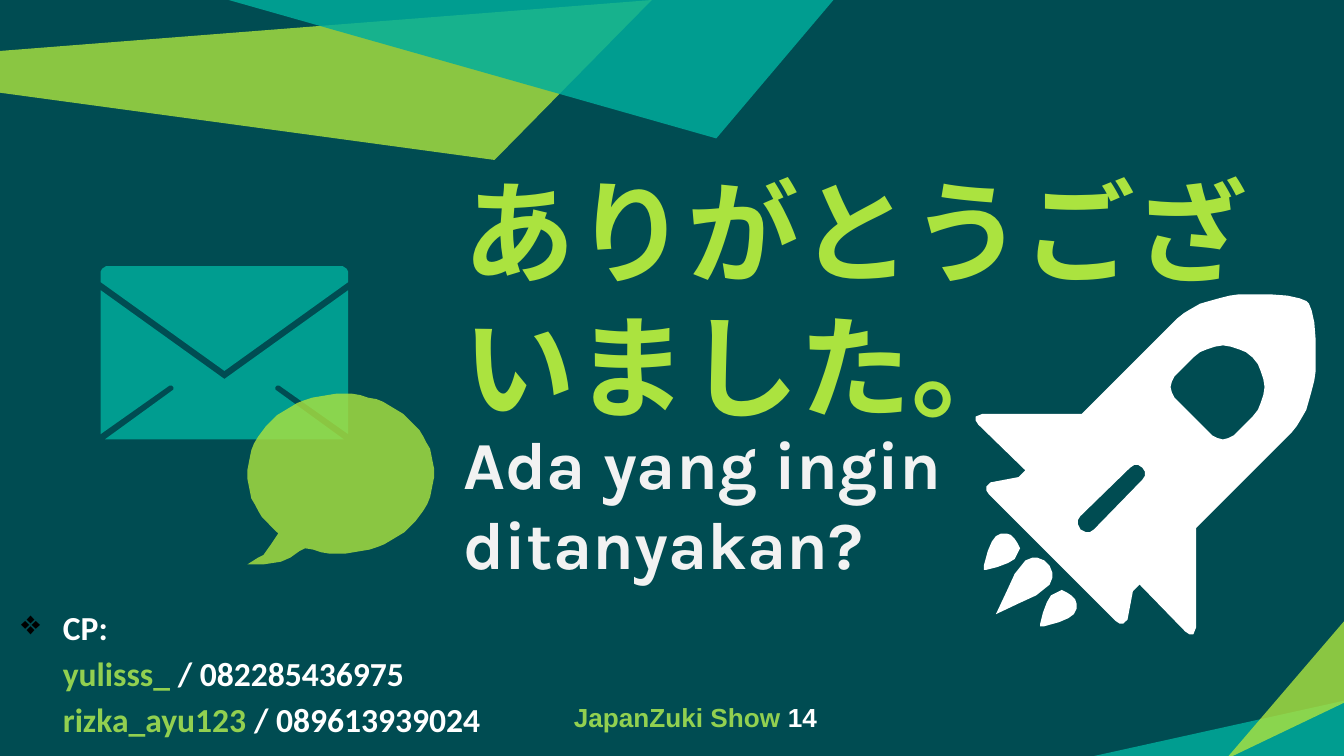
"""Build the closing slide with thanks, a question prompt and contact details."""
from math import cos, radians, sin

from lxml import etree
from pptx import Presentation
from pptx.dml.color import RGBColor
from pptx.enum.text import MSO_ANCHOR, MSO_AUTO_SIZE, PP_ALIGN
from pptx.oxml.ns import qn
from pptx.util import Inches, Pt

TOP = MSO_ANCHOR.TOP
NO_FIT = MSO_AUTO_SIZE.NONE
LEFT, CENTER = PP_ALIGN.LEFT, PP_ALIGN.CENTER

DEEP_TEAL = RGBColor(0x00, 0x4C, 0x52)
TEAL = RGBColor(0x00, 0xAE, 0x9D)
LIME = RGBColor(0xAB, 0xE3, 0x3F)
GREEN = RGBColor(0x92, 0xD0, 0x50)
PALE = RGBColor(0xF2, 0xF2, 0xF2)
WHITE = RGBColor(0xFF, 0xFF, 0xFF)

presentation = Presentation()
presentation.slide_width = Inches(10)
presentation.slide_height = presentation.slide_width * 9 // 16
COLUMN = presentation.slide_width // 1000
slide = presentation.slides.add_slide(presentation.slide_layouts[5])
slide.background.fill.solid()
slide.background.fill.fore_color.rgb = DEEP_TEAL


def draw(shapes, outlines, color, opacity=100):
    """Draw closed outlines, given in grid columns, as one filled shape."""
    builder = shapes.build_freeform(*outlines[0][0], scale=COLUMN)
    for index, outline in enumerate(outlines):
        if index:
            builder.move_to(*outline[0])
        builder.add_line_segments(outline[1:], close=True)
    shape = builder.convert_to_shape()
    shape.shadow.inherit = False
    shape.line.fill.background()
    shape.fill.solid()
    shape.fill.fore_color.rgb = color
    if opacity < 100:
        fill_color = shape.fill._xPr.find(qn("a:solidFill"))[0]
        etree.SubElement(fill_color, qn("a:alpha"), val=str(opacity * 1000))


def write(shape, box, inset, runs, font_name, size, alignment=LEFT):
    """Place a text shape on the grid and fill its paragraph; None breaks a line."""
    shape.left, shape.top, shape.width, shape.height = [side * COLUMN for side in box]
    frame = shape.text_frame
    frame.word_wrap = True
    frame.auto_size = NO_FIT
    frame.vertical_anchor = TOP
    frame.margin_left = frame.margin_right = 10 * COLUMN
    frame.margin_top = frame.margin_bottom = inset * COLUMN
    paragraph = frame.paragraphs[0]
    paragraph.alignment = alignment
    for item in runs:
        if item is None:
            paragraph.add_line_break()
            continue
        run = paragraph.add_run()
        run.text, run.font.color.rgb = item
        run.font.name = font_name
        run.font.size = Pt(size)
        run.font.bold = True
    return paragraph


RIBBONS = [
    ([(-1, 38), (0, 69), (368, 119), (485, 0)], LIME, 81),
    ([(1002, 521), (1002, 565), (803, 565)], TEAL, 83),
    ([(1002, 522), (1002, 460), (912, 565)], LIME, 81),
    ([(170, 0), (533, 103), (621, -1), (609, 0)], TEAL, 83),
]
for ribbon, color, opacity in RIBBONS:
    draw(slide.shapes, [ribbon], color, opacity)

write(slide.shapes.title, (335, 111, 644, 127), 10,
      [("ありがとうございました。", LIME)], "Manrope", 60)
question = write(slide.shapes.add_textbox(0, 0, 0, 0), (335, 304, 605, 149), 10,
                 [("Ada yang ingin ditanyakan?", PALE)], "Karla", 36)
question.space_before = Pt(6)

ENVELOPE_HALVES = [
    [(167, 276), (75, 210), (75, 202), (76, 200), (79, 198)],
    [(167, 282), (75, 216), (75, 323), (126, 287), (128, 287), (129, 288),
     (129, 290), (78, 327)],
]
envelope = slide.shapes.add_group_shape()
for half in ENVELOPE_HALVES:
    draw(envelope.shapes, [half + [(334 - x, y) for x, y in reversed(half)]], TEAL, 83)

BUBBLE_TAIL = [(223, 410), (216, 415), (209, 418), (196, 420), (184, 420),
               (192, 415), (196, 413), (201, 406)]
bubble = [(round(253.5 + 69.5 * cos(radians(angle))),
           round(352.5 + 59.5 * sin(radians(angle)))) for angle in range(132, 473, 5)]
draw(slide.shapes, [bubble + BUBBLE_TAIL], LIME, 81)

BODY = [(736, 368), (734, 365), (734, 362), (737, 359), (758, 355), (763, 350),
        (728, 316), (726, 313), (726, 310), (731, 308), (805, 308), (876, 237),
        (881, 233), (886, 230), (893, 226), (900, 224), (907, 222), (915, 220),
        (922, 219), (945, 219), (958, 220), (967, 222), (972, 224)]
WINDOW = [(932, 266), (927, 262), (922, 260), (916, 258), (910, 257), (904, 258),
          (898, 260), (893, 262), (888, 266), (874, 280), (872, 284), (871, 288),
          (872, 292), (874, 296)]
SLOT = [(850, 348), (847, 346), (844, 346), (841, 348), (804, 384), (802, 387),
        (802, 390), (804, 394)]
LARGE_FLAME = [(741, 457), (749, 440), (755, 427), (759, 422), (763, 417),
               (768, 415), (772, 415), (777, 417)]
SMALL_FLAME = [(745, 397), (741, 399), (738, 403), (735, 410), (732, 421), (732, 424),
               (734, 424), (742, 422), (750, 419), (755, 416), (758, 410), (759, 408),
               (757, 404), (755, 401), (752, 398), (749, 397)]
AXIS = 1198
body, window, slot, large_flame = [
    half + [(AXIS - y, AXIS - x) for x, y in reversed(half)]
    for half in (BODY, WINDOW, SLOT, LARGE_FLAME)]
opposite_flame = [(AXIS - y, AXIS - x) for x, y in SMALL_FLAME]
rocket = slide.shapes.add_group_shape()
for outlines in ([window, slot, body], [large_flame], [opposite_flame], [SMALL_FLAME]):
    draw(rocket.shapes, outlines, WHITE)

write(slide.shapes.add_textbox(0, 0, 0, 0), (216, 512, 603, 86), 10,
      [("JapanZuki Show ", GREEN), ("14", WHITE)], "Arial", 14, CENTER)

contact = write(slide.shapes.add_textbox(0, 0, 0, 0), (-14, 442, 500, 113), 5,
                [("CP: ", WHITE), None,
                 ("yulisss_ ", GREEN), ("/ 082285436975", WHITE), None,
                 ("rizka_ayu123 ", GREEN), ("/ 089613939024", WHITE)], "Calibri", 18)
contact.line_spacing = 1.15
contact.space_after = Pt(10)
properties = contact._p.get_or_add_pPr()
properties.set("marL", str(51 * COLUMN))
properties.set("indent", str(-31 * COLUMN))
bullet_color = etree.SubElement(properties, qn("a:buClr"))
etree.SubElement(bullet_color, qn("a:srgbClr"), val="000000")
etree.SubElement(properties, qn("a:buChar"), char="❖")

presentation.save("out.pptx")
